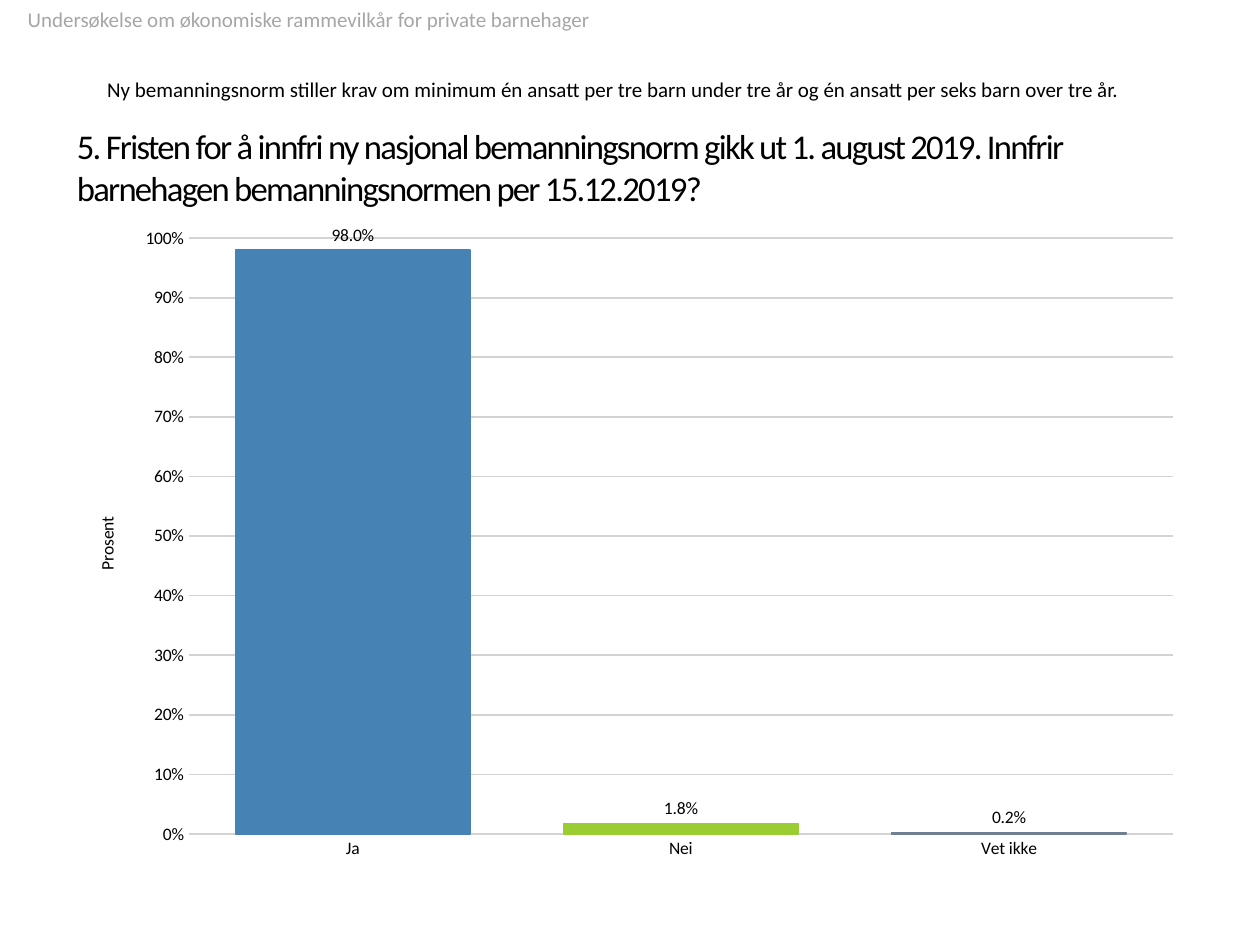
from lxml.etree import SubElement
from pptx import Presentation
from pptx.chart.data import CategoryChartData
from pptx.dml.color import RGBColor
from pptx.enum.chart import XL_CHART_TYPE as ChartType, XL_LABEL_POSITION as LabelPosition
from pptx.enum.chart import XL_TICK_MARK as TickMark
from pptx.enum.text import MSO_ANCHOR as Anchor, PP_ALIGN as Align
from pptx.oxml.ns import qn
from pptx.util import Inches, Pt

COLORS = {"text": "000000", "header": "A6A6A6", "grid": "D3D3D3",
          "Ja": "4682B4", "Nei": "9ACD32", "Vet ikke": "708090"}
SHARES = {"Ja": 0.98, "Nei": 0.018, "Vet ikke": 0.002}
FONT = "Calibri"
LEFT, WIDTH = 0.51, 8.98


def color(name):
    return RGBColor.from_string(COLORS[name])


def write(box, text, place, size=12, ink="text", anchor=Anchor.MIDDLE,
          left_inset=0.1, bottom_inset=0.05, spacing=None):
    box.left, box.top, box.width, box.height = map(Inches, place)
    frame = box.text_frame
    frame.word_wrap = True
    frame.vertical_anchor = anchor
    frame.margin_left = Inches(left_inset)
    frame.margin_bottom = Inches(bottom_inset)
    para = frame.paragraphs[0]
    para.alignment = Align.LEFT
    span = para.add_run()
    span.text = text
    span.font.name, span.font.size = FONT, Pt(size)
    span.font.color.rgb = color(ink)
    if spacing is not None:
        span.font._element.set("spc", str(spacing))


deck = Presentation()
deck.slide_width, deck.slide_height = Inches(10), Inches(7.5)
page = deck.slides.add_slide(deck.slide_layouts[5])

# Question, introduction and running header
write(page.shapes.title,
      "5. Fristen for å innfri ny nasjonal bemanningsnorm gikk ut 1. august 2019. "
      "Innfrir barnehagen bemanningsnormen per 15.12.2019?",
      (LEFT, 1.02, 9, 0.6), size=19.8, spacing=-100)
write(page.shapes.add_textbox(0, 0, 0, 0),
      "Ny bemanningsnorm stiller krav om minimum én ansatt per tre barn under tre år "
      "og én ansatt per seks barn over tre år.",
      (LEFT, 0.24, WIDTH, 0.71), anchor=Anchor.BOTTOM, left_inset=0.34, bottom_inset=0.14)
write(page.shapes.add_textbox(0, 0, 0, 0),
      "Undersøkelse om økonomiske rammevilkår for private barnehager",
      (0, 0, 10, 0.25), ink="header", anchor=Anchor.TOP, left_inset=0.22)

# Column chart of the answers
answers = CategoryChartData(number_format="0.0%")
answers.categories = list(SHARES)
answers.add_series("Series 1", list(SHARES.values()))
chart = page.shapes.add_chart(ChartType.COLUMN_CLUSTERED, Inches(LEFT), Inches(1.7),
                              Inches(WIDTH), Inches(5.28), answers).chart
chart.has_title = False
chart.has_legend = False
chart.font.name, chart.font.size = FONT, Pt(10)
chart.font.color.rgb = color("text")

# Axes
for axis in (chart.category_axis, chart.value_axis):
    axis.major_tick_mark = axis.minor_tick_mark = TickMark.NONE
    axis.format.line.fill.background()
    axis.tick_labels.font.size = Pt(10)
percent = chart.value_axis
percent.minimum_scale, percent.maximum_scale, percent.major_unit = 0, 1, 0.1
percent.tick_labels.number_format = "0%"
percent.tick_labels.number_format_is_linked = False
percent.major_gridlines.format.line.color.rgb = color("grid")
percent.major_gridlines.format.line.width = Pt(1)
percent.axis_title.text_frame.text = "Prosent"
title_font = percent.axis_title.text_frame.paragraphs[0].runs[0].font
title_font.name, title_font.size, title_font.bold = FONT, Pt(10), False
title_font.color.rgb = color("text")

# Columns and their labels
plot = chart.plots[0]
plot.gap_width = 40
plot.vary_by_categories = False
series = plot.series[0]
series.format.fill.solid()
series.format.fill.fore_color.rgb = color("Ja")
for index, answer in enumerate(SHARES):
    column = series.points[index].format
    column.fill.solid()
    column.fill.fore_color.rgb = color(answer)
    column.line.color.rgb = color(answer)
    column.line.width = Pt(0.75)
labels = series.data_labels
labels.show_value = True
labels.number_format, labels.number_format_is_linked = "0.0%", False
labels.position = LabelPosition.OUTSIDE_END
labels.font.name, labels.font.size = FONT, Pt(10)
labels.font.color.rgb = color("text")

# Inner plot area as shares of the chart
area = chart._chartSpace.chart.plotArea
for old in area.findall(qn("c:layout")):
    area.remove(old)
layout = SubElement(area, qn("c:layout"))
area.insert(0, layout)
manual = SubElement(layout, qn("c:manualLayout"))
for tag, value in (("layoutTarget", "inner"), ("xMode", "edge"), ("yMode", "edge"),
                   ("x", 0.11), ("y", 0.036), ("w", 0.87), ("h", 0.896)):
    SubElement(manual, qn(f"c:{tag}")).set("val", str(value))

deck.save("out.pptx")
